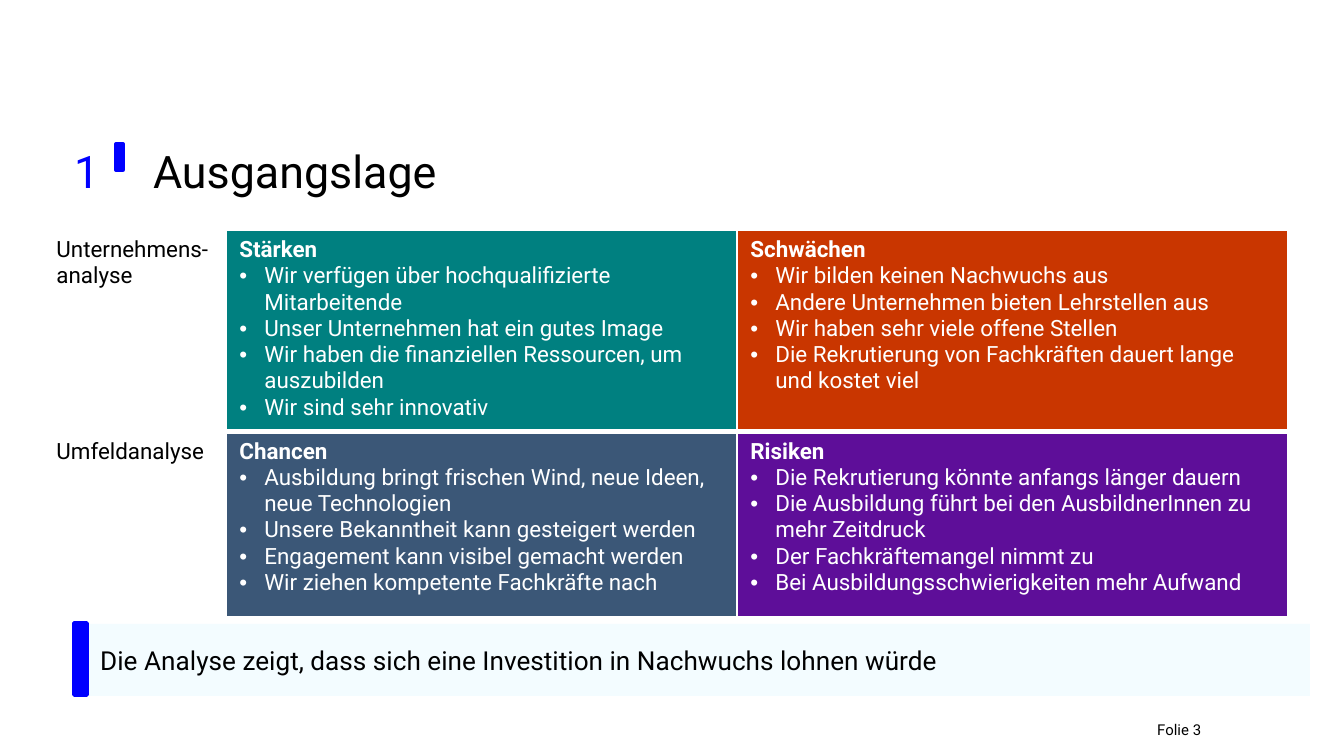
from lxml.etree import SubElement
from pptx import Presentation
from pptx.dml.color import RGBColor
from pptx.enum.shapes import MSO_SHAPE as Shape
from pptx.enum.text import MSO_ANCHOR as Anchor, MSO_AUTO_SIZE as AutoSize, PP_ALIGN as Align
from pptx.oxml.ns import qn
from pptx.util import Pt

WIDTH, HEIGHT = 1344, 756
EMU_PER_PX = 9144000 / WIDTH
FONT = "Roboto"
COLORS = {
    "text": "000000",
    "white": "FFFFFF",
    "accent": "0000FF",
    "banner": "F3FCFF",
    "strengths": "008080",
    "weaknesses": "C93600",
    "chances": "3B5777",
    "risks": "5E0E99",
}
COLUMNS = (183, 511, 551)
ROW_HEIGHT = 185
ROWS = [
    ("Unternehmens-analyse", [
        ("strengths", "Stärken", [
            "Wir verfügen über hochqualifizierte Mitarbeitende",
            "Unser Unternehmen hat ein gutes Image",
            "Wir haben die finanziellen Ressourcen, um auszubilden",
            "Wir sind sehr innovativ",
        ]),
        ("weaknesses", "Schwächen", [
            "Wir bilden keinen Nachwuchs aus",
            "Andere Unternehmen bieten Lehrstellen aus",
            "Wir haben sehr viele offene Stellen",
            "Die Rekrutierung von Fachkräften dauert lange und kostet viel",
        ]),
    ]),
    ("Umfeldanalyse", [
        ("chances", "Chancen", [
            "Ausbildung bringt frischen Wind, neue Ideen, neue Technologien",
            "Unsere Bekanntheit kann gesteigert werden",
            "Engagement kann visibel gemacht werden",
            "Wir ziehen kompetente Fachkräfte nach",
        ]),
        ("risks", "Risiken", [
            "Die Rekrutierung könnte anfangs länger dauern",
            "Die Ausbildung führt bei den AusbildnerInnen zu mehr Zeitdruck",
            "Der Fachkräftemangel nimmt zu",
            "Bei Ausbildungsschwierigkeiten mehr Aufwand",
        ]),
    ]),
]


def px(value):
    return round(value * EMU_PER_PX)


def rgb(name):
    return RGBColor.from_string(COLORS[name])


def write(paragraph, text, size=12, color="text", bold=False, bullet=False):
    """Add a run to the paragraph, with a hanging bullet on request."""
    if bullet:
        properties = paragraph._p.get_or_add_pPr()
        properties.set("marL", str(px(25)))
        properties.set("indent", str(-px(25)))
        SubElement(properties, qn("a:buFont"), typeface="Arial")
        SubElement(properties, qn("a:buChar"), char="•")
    run = paragraph.add_run()
    run.text = text
    font = run.font
    font.name, font.size, font.bold = FONT, Pt(size), bold
    font.color.rgb = rgb(color)


def add_bar(slide, left, top, width, height, color, outlined=False):
    bar = slide.shapes.add_shape(Shape.RECTANGLE, px(left), px(top), px(width), px(height))
    bar.shadow.inherit = False
    bar.fill.solid()
    bar.fill.fore_color.rgb = rgb(color)
    if outlined:
        bar.line.color.rgb = rgb(color)
        bar.line.width = Pt(2)
    else:
        bar.line.fill.background()


def add_text(slide, left, top, width, height, text, anchor=Anchor.TOP, **text_format):
    frame = slide.shapes.add_textbox(px(left), px(top), px(width), px(height)).text_frame
    frame.word_wrap = True
    frame.vertical_anchor = anchor
    write(frame.paragraphs[0], text, **text_format)


def set_title(slide, number, text):
    title = slide.shapes.title
    title.left, title.top, title.width, title.height = px(74), px(137), px(1196), px(67)
    title.fill.solid()
    title.fill.fore_color.rgb = rgb("white")
    frame = title.text_frame
    frame.auto_size = AutoSize.NONE
    frame.word_wrap = True
    frame.vertical_anchor = Anchor.TOP
    frame.margin_left, frame.margin_right = 0, px(11)
    frame.margin_top = frame.margin_bottom = px(7)
    paragraph = frame.paragraphs[0]
    paragraph.alignment = Align.LEFT
    tabs = SubElement(paragraph._p.get_or_add_pPr(), qn("a:tabLst"))
    SubElement(tabs, qn("a:tab"), pos=str(px(79)), algn="l")
    write(paragraph, number, size=24, color="accent")
    write(paragraph, f" \t{text}", size=24)


def set_borders(cell, bottom, top):
    """Draw white cell borders; bottom and top are widths in points."""
    properties = cell._tc.get_or_add_tcPr()
    for side, width in (("L", 1), ("R", 1), ("T", top), ("B", bottom)):
        line = SubElement(properties, qn(f"a:ln{side}"), w=str(Pt(width)))
        fill = SubElement(line, qn("a:solidFill"))
        SubElement(fill, qn("a:srgbClr"), val=COLORS["white"])


def fill_quadrant(cell, color, heading, points):
    cell.fill.solid()
    cell.fill.fore_color.rgb = rgb(color)
    frame = cell.text_frame
    write(frame.paragraphs[0], heading, color="white", bold=True)
    for point in points:
        write(frame.add_paragraph(), point, color="white", bullet=True)


def add_swot_table(slide, left, top):
    table = slide.shapes.add_table(
        len(ROWS), len(COLUMNS), px(left), px(top),
        px(sum(COLUMNS)), px(ROW_HEIGHT * len(ROWS))).table
    table.first_row = table.horz_banding = False
    for column, width in zip(table.columns, COLUMNS):
        column.width = px(width)
    for index, (label, quadrants) in enumerate(ROWS):
        row = table.rows[index]
        row.height = px(ROW_HEIGHT)
        cells = list(row.cells)
        for cell in cells:
            first = index == 0
            set_borders(cell, bottom=3 if first else 1, top=1 if first else 3)
        cells[0].fill.background()
        write(cells[0].text_frame.paragraphs[0], label)
        for cell, quadrant in zip(cells[1:], quadrants):
            fill_quadrant(cell, *quadrant)


def main():
    presentation = Presentation()
    presentation.slide_width, presentation.slide_height = px(WIDTH), px(HEIGHT)
    slide = presentation.slides.add_slide(presentation.slide_layouts[5])
    add_text(slide, 1144, 714, 201, 32, "Folie 3", size=8)
    add_bar(slide, 87, 624, 1223, 72, "banner")
    set_title(slide, "1", "Ausgangslage")
    add_bar(slide, 74, 623, 13, 72, "accent", outlined=True)
    add_swot_table(slide, 43, 230)
    add_text(slide, 87, 632, 1223, 56,
             "Die Analyse zeigt, dass sich eine Investition in Nachwuchs lohnen würde",
             anchor=Anchor.MIDDLE, size=14)
    add_bar(slide, 116, 144, 7, 26, "accent", outlined=True)
    presentation.save("out.pptx")


if __name__ == "__main__":
    main()
